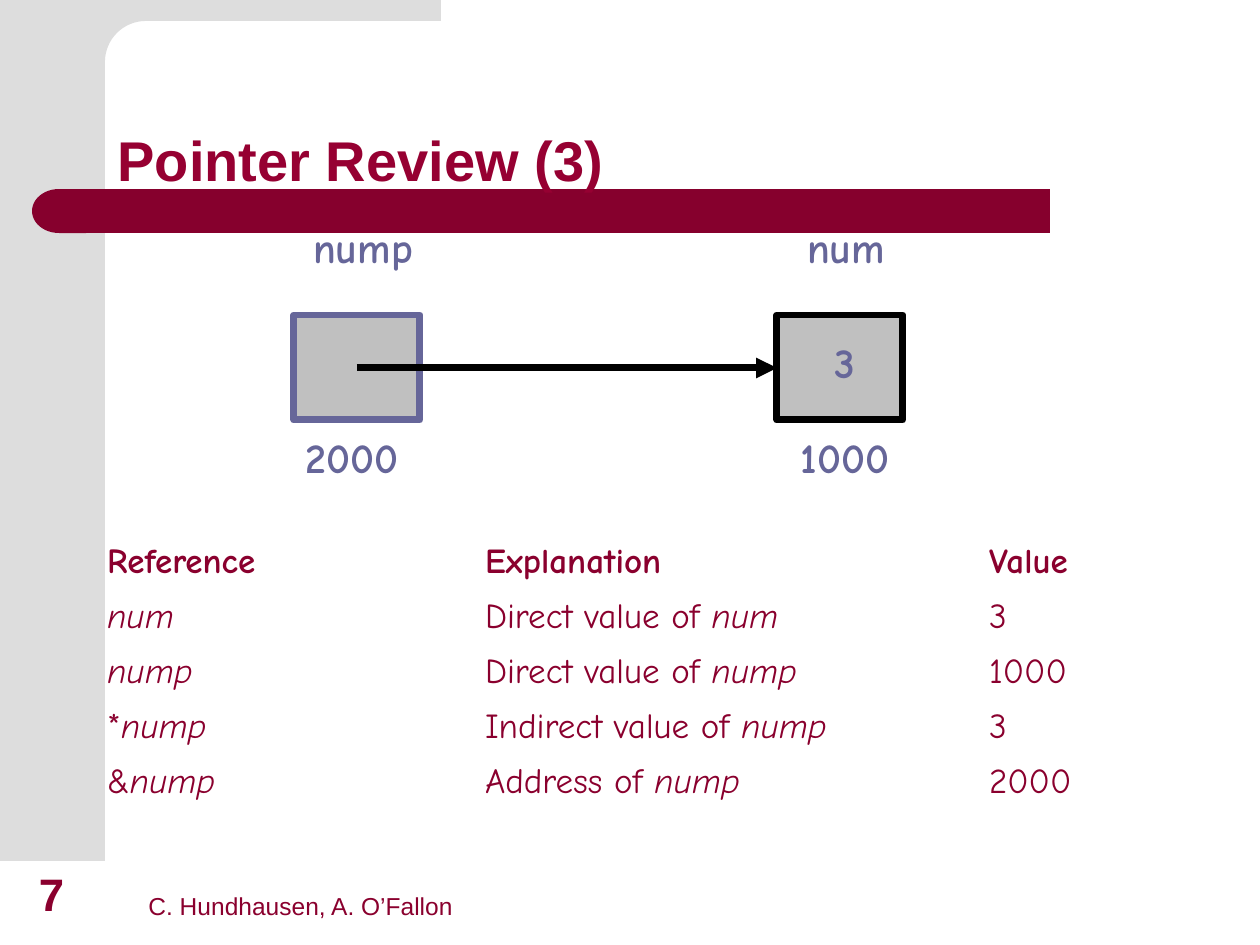
from math import cos, pi, sin

from lxml.etree import SubElement
from pptx import Presentation
from pptx.dml.color import RGBColor
from pptx.enum.shapes import MSO_CONNECTOR, MSO_SHAPE
from pptx.enum.text import MSO_ANCHOR, PP_ALIGN
from pptx.oxml.ns import qn
from pptx.util import Pt

EMU_PER_PX = 914400 / 126
GREY = RGBColor(0xDD, 0xDD, 0xDD)
BAR_RED = RGBColor(0x86, 0x00, 0x2D)
TITLE_RED = RGBColor(0x96, 0x00, 0x32)
TEXT_RED = RGBColor(0x8A, 0x00, 0x2E)
CELL_GREY = RGBColor(0xC0, 0xC0, 0xC0)
SLATE = RGBColor(0x66, 0x66, 0x99)
BLACK = RGBColor(0, 0, 0)
BODY_FONT = "Comic Neue"

HEADINGS = ["Reference", "Explanation", "Value"]
REFERENCES = [
    # operator, variable, explanation, value
    ("", "num", "Direct value of ", "3"),
    ("", "nump", "Direct value of ", "1000"),
    ("*", "nump", "Indirect value of ", "3"),
    ("&", "nump", "Address of ", "2000"),
]


def px(*lengths):
    return [round(length * EMU_PER_PX) for length in lengths]


def set_font(font, name, size, color, bold=False, italic=False):
    font.name, font.size, font.bold, font.italic = name, Pt(size), bold, italic
    font.color.rgb = color


def paint(shape, fill, line=None):
    shape.shadow.inherit = False
    shape.fill.solid()
    shape.fill.fore_color.rgb = fill
    if line is None:
        shape.line.fill.background()
    else:
        shape.line.color.rgb = line
        shape.line.width = Pt(4)


def add_filled(slide, preset, box, fill, line=None):
    shape = slide.shapes.add_shape(preset, *px(*box))
    paint(shape, fill, line)
    return shape


def add_label(slide, box, text, font, size, color, bold=True,
              align=PP_ALIGN.CENTER, anchor=MSO_ANCHOR.TOP, spacing=1.0):
    frame = slide.shapes.add_textbox(*px(*box)).text_frame
    frame.word_wrap = True
    frame.vertical_anchor = anchor
    frame.text = text
    paragraph = frame.paragraphs[0]
    paragraph.alignment = align
    paragraph.line_spacing = spacing
    set_font(paragraph.runs[0].font, font, size, color, bold)


def add_frame(slide, rail_width, rail_height):
    """Grey rail and top strip, joined by a rounded inner corner."""
    add_filled(slide, MSO_SHAPE.RECTANGLE, (0, 0, rail_width, rail_height), GREY)
    strip_bottom, strip_right, radius, steps = 21, 441, 41, 16
    center_x, center_y = rail_width + radius, strip_bottom + radius
    corner = [(center_x - radius * sin(step * pi / 2 / steps),
               center_y - radius * cos(step * pi / 2 / steps))
              for step in range(steps + 1)]
    outline = [(strip_right, strip_bottom), *corner,
               (rail_width, 77), (63, 77), (63, 0)]
    builder = slide.shapes.build_freeform(*px(strip_right, 0))
    builder.add_line_segments([px(*point) for point in outline])
    paint(builder.convert_to_shape(), GREY)


def add_title_bar(slide, left, top, width, height):
    cap_width = 54
    add_filled(slide, MSO_SHAPE.RECTANGLE,
               (left + cap_width - 1, top, width - cap_width + 1, height), BAR_RED)
    cap = add_filled(slide, MSO_SHAPE.FLOWCHART_DELAY,
                     (left, top, cap_width, height), BAR_RED)
    cap.rotation = 180


def place_title(slide, box, text):
    title = slide.shapes.title
    slide.shapes.element.append(title.element)  # in front of the bar
    title.left, title.top, title.width, title.height = px(*box)
    frame = title.text_frame
    frame.text = text
    frame.word_wrap = True
    frame.vertical_anchor = MSO_ANCHOR.BOTTOM
    paragraph = frame.paragraphs[0]
    paragraph.alignment = PP_ALIGN.LEFT
    paragraph.line_spacing = 0.9
    set_font(paragraph.runs[0].font, "Arial", 32, TITLE_RED, bold=True)


def add_arrow(slide, start, end):
    arrow = slide.shapes.add_connector(MSO_CONNECTOR.STRAIGHT, *px(*start), *px(*end))
    arrow.line.color.rgb = BLACK
    arrow.line.width = Pt(4)
    SubElement(arrow.line._get_or_add_ln(), qn("a:tailEnd"), type="triangle")
    SubElement(arrow.element.spPr, qn("a:effectLst"))


def add_pointer_diagram(slide, left, top, width, height):
    cell_width, cell_height, cell_top = 126, 105, top + 94
    num_left = left + width - cell_width

    def label(x, y, label_width, text):
        add_label(slide, (x, y, label_width, 58), text, BODY_FONT, 24, SLATE, spacing=0.9)

    for cell_left, line, name, address in (
            (left, SLATE, "nump", "2000"), (num_left, BLACK, "num", "1000")):
        add_filled(slide, MSO_SHAPE.RECTANGLE,
                   (cell_left, cell_top, cell_width, cell_height), CELL_GREY, line)
        label(cell_left - 10, top, 158, name)
        label(cell_left - 21 + (cell_left == num_left) * 10,
              top + height - 58, 158, address)
    label(num_left + 21, cell_top + 21, 94, "3")
    middle = cell_top + cell_height // 2 + 1
    add_arrow(slide, (left + cell_width // 2, middle), (num_left, middle))


def add_reference_table(slide, left, top, column_widths, row_height):
    rows = [[[(heading, False)] for heading in HEADINGS]]
    for operator, variable, explanation, value in REFERENCES:
        rows.append([[(operator, False), (variable, True)],
                     [(explanation, False), (variable, True)],
                     [(value, False)]])
    table = slide.shapes.add_table(
        len(rows), len(column_widths),
        *px(left, top, sum(column_widths), row_height * len(rows))).table
    table.first_row = table.horz_banding = False
    for column, width in zip(table.columns, column_widths):
        column.width = px(width)[0]
    for row_index, row in enumerate(rows):
        table.rows[row_index].height = px(row_height)[0]
        for column_index, parts in enumerate(row):
            cell = table.cell(row_index, column_index)
            cell.fill.background()
            cell.margin_left = cell.margin_right = 0
            cell.margin_top = cell.margin_bottom = 0
            cell.vertical_anchor = MSO_ANCHOR.MIDDLE
            paragraph = cell.text_frame.paragraphs[0]
            paragraph.line_spacing = 0.9
            for text, italic in parts:
                if text:
                    run = paragraph.add_run()
                    run.text = text
                    set_font(run.font, BODY_FONT, 20, TEXT_RED, row_index == 0, italic)
            properties = cell._tc.get_or_add_tcPr()
            for position, side in enumerate(("a:lnL", "a:lnR", "a:lnT", "a:lnB")):
                border = SubElement(properties, qn(side), w="0")
                SubElement(border, qn("a:noFill"))
                properties.insert(position, border)


def add_footer(slide, top, height):
    add_label(slide, (136, top, 473, height), "C. Hundhausen, A. O’Fallon", "Arial", 14,
              TEXT_RED, False, PP_ALIGN.LEFT, MSO_ANCHOR.BOTTOM)
    add_label(slide, (11, top, 81, height), "7", "Arial", 26, TEXT_RED,
              anchor=MSO_ANCHOR.BOTTOM)


def main():
    presentation = Presentation()
    presentation.slide_width, presentation.slide_height = px(1260, 945)
    slide = presentation.slides.add_slide(presentation.slide_layouts[5])
    add_frame(slide, 105, 861)
    add_title_bar(slide, 32, 189, 1018, 44)
    add_footer(slide, 861, 66)
    place_title(slide, (105, 42, 1092, 158), "Pointer Review (3)")
    add_pointer_diagram(slide, 294, 221, 609, 268)
    add_reference_table(slide, 107, 535, (378, 504, 208), 55)
    presentation.save("out.pptx")


if __name__ == "__main__":
    main()
